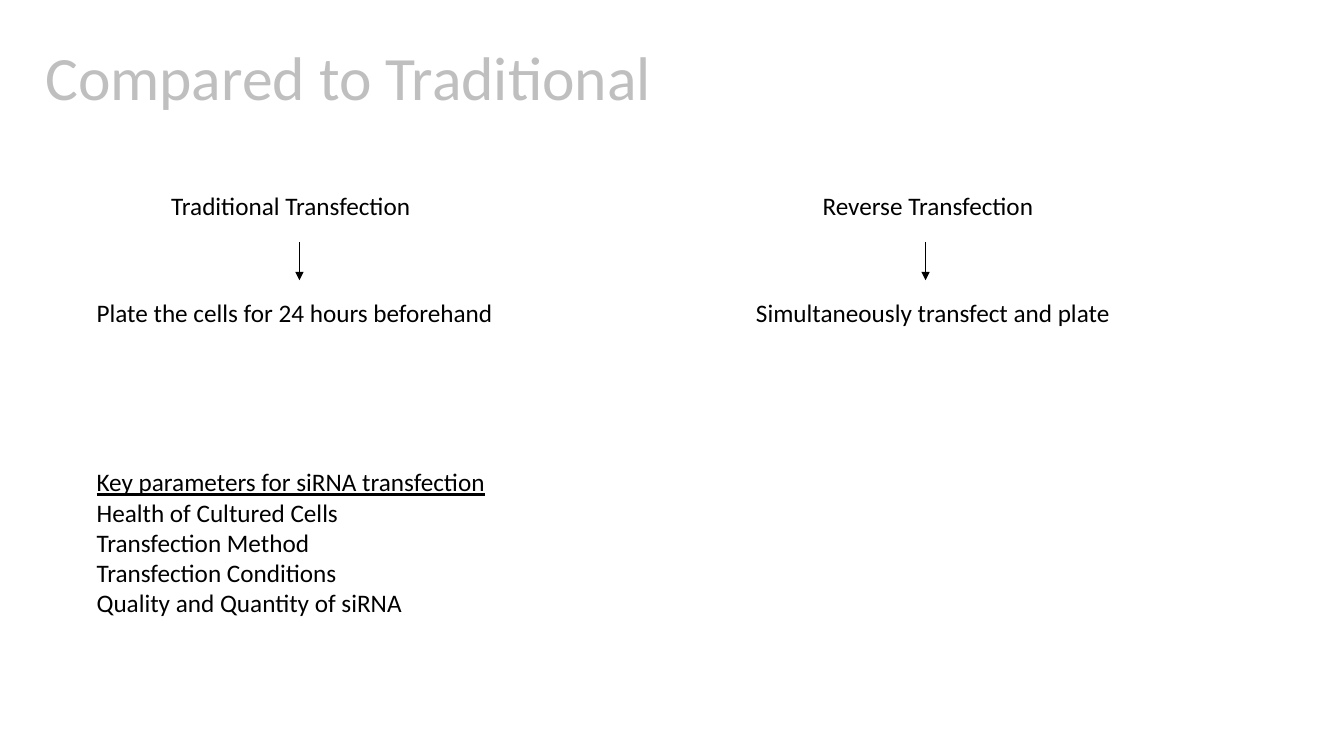
import pptx
import pptx.dml.color
import pptx.enum.shapes
import pptx.enum.text
import pptx.oxml
import pptx.oxml.ns
import pptx.util

BLACK = pptx.dml.color.RGBColor(0x00, 0x00, 0x00)
GREY = pptx.dml.color.RGBColor(0xBF, 0xBF, 0xBF)
EMU_PER_PX = 9144
SLIDE_SIZE = (1333, 750)


def px(length):
    return pptx.util.Emu(length * EMU_PER_PX)


class SlideBuilder:
    """Draws text and arrows on one slide in a shared style."""

    font_name = "Calibri"
    body_size = 18
    title_size = 44

    def __init__(self, slide):
        self.slide = slide

    def text(self, box, lines, size=body_size, color=BLACK):
        frame = self.slide.shapes.add_textbox(*map(px, box)).text_frame
        frame.word_wrap = True
        frame.text = "\n".join(lines)
        for paragraph in frame.paragraphs:
            paragraph.font.name = self.font_name
            paragraph.font.size = pptx.util.Pt(size)
            paragraph.font.color.rgb = color
        return frame

    def title(self, box, line):
        frame = self.text(box, [line], self.title_size, GREY)
        frame.vertical_anchor = pptx.enum.text.MSO_ANCHOR.MIDDLE
        frame.paragraphs[0].line_spacing = 0.9

    def headed_list(self, box, heading, items):
        frame = self.text(box, [heading, *items])
        frame.paragraphs[0].font.underline = True

    def down_arrow(self, x, top, bottom):
        arrow = self.slide.shapes.add_connector(
            pptx.enum.shapes.MSO_CONNECTOR.STRAIGHT,
            px(x), px(top), px(x), px(bottom))
        arrow.line.color.rgb = BLACK
        arrow.line.width = pptx.util.Pt(0.5)
        namespace = pptx.oxml.ns.nsdecls("a")
        arrow.line._get_or_add_ln().append(
            pptx.oxml.parse_xml(f'<a:tailEnd {namespace} type="triangle"/>'))
        arrow._element.spPr.append(
            pptx.oxml.parse_xml(f"<a:effectLst {namespace}/>"))


def main():
    presentation = pptx.Presentation()
    presentation.slide_width, presentation.slide_height = map(px, SLIDE_SIZE)
    blank_layout = presentation.slide_layouts[6]
    builder = SlideBuilder(presentation.slides.add_slide(blank_layout))

    builder.title((35, 41, 753, 78), "Compared to Traditional")

    methods = [
        ("Traditional Transfection", 160, 274, 297,
         "Plate the cells for 24 hours beforehand", 86, 422),
        ("Reverse Transfection", 806, 242, 918,
         "Simultaneously transfect and plate", 740, 374),
    ]
    for method, method_left, method_width, arrow_x, step, step_left, step_width in methods:
        builder.text((method_left, 184, method_width, 40), [method])
        builder.down_arrow(arrow_x, 240, 278)
        builder.text((step_left, 290, step_width, 40), [step])

    builder.headed_list(
        (86, 458, 1110, 162),
        "Key parameters for siRNA transfection",
        ["Health of Cultured Cells", "Transfection Method",
         "Transfection Conditions", "Quality and Quantity of siRNA"])

    presentation.save("out.pptx")


if __name__ == "__main__":
    main()
